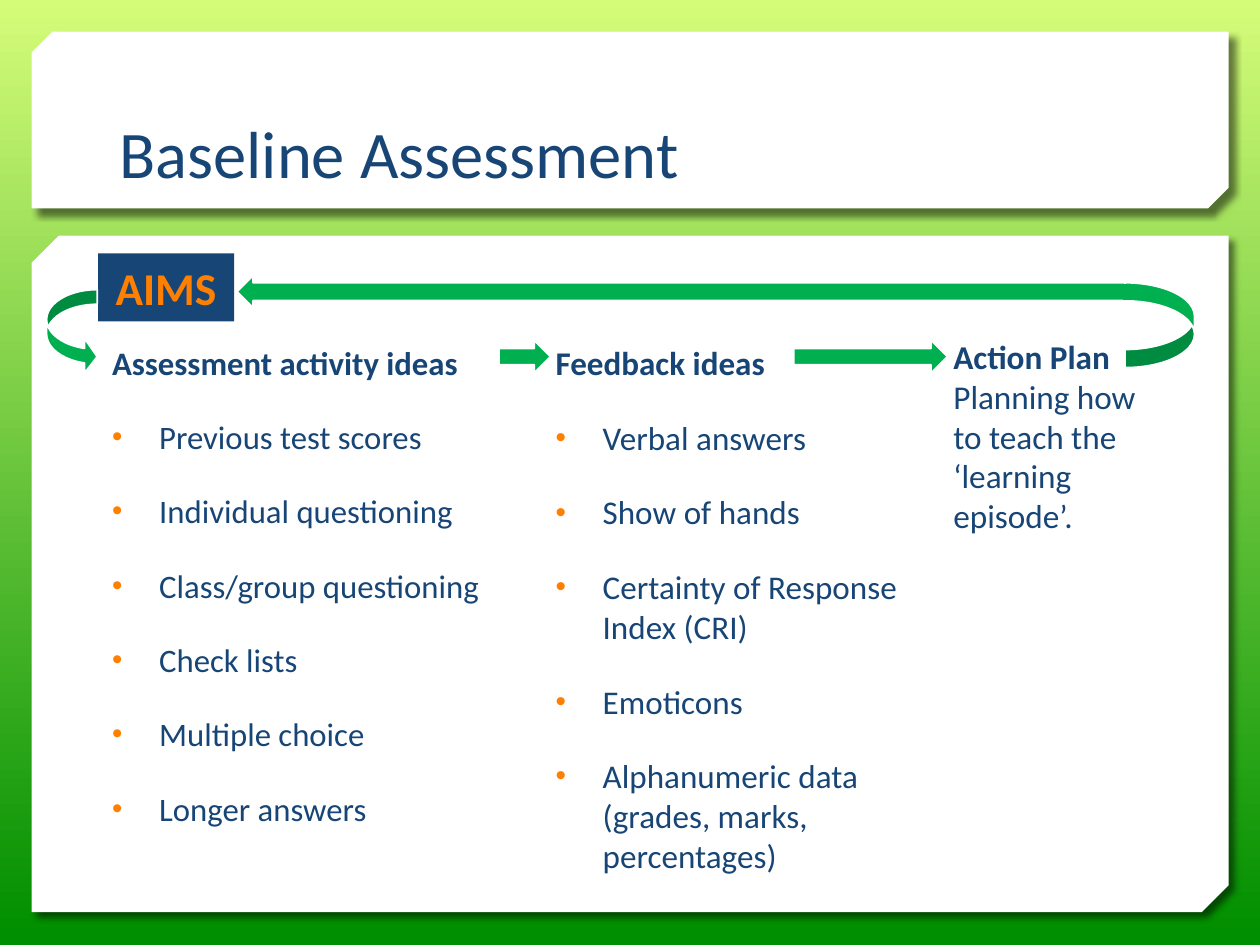
from dataclasses import dataclass

import pptx
import pptx.dml.color
import pptx.enum.shapes
import pptx.enum.text
import pptx.oxml
import pptx.oxml.ns
import pptx.util
from pptx.util import Cm, Pt

SHAPES = pptx.enum.shapes.MSO_SHAPE
ANCHOR = pptx.enum.text.MSO_ANCHOR
ALIGN = pptx.enum.text.PP_ALIGN
DRAWING = pptx.oxml.ns.nsdecls("a")


@dataclass(frozen=True)
class Theme:
    font: str = "Calibri"
    ink: str = "174576"
    accent: str = "FF7F01"
    arrow: str = "00B050"
    paper: str = "FFFFFF"
    sky: str = "D5FC79"
    grass: str = "008F00"
    title_size: float = 38
    aims_size: float = 26
    assessment_size: float = 18.7
    feedback_size: float = 18.9
    plan_size: float = 19
    bullet_gap: float = 20


THEME = Theme()


def colour(code):
    return pptx.dml.color.RGBColor.from_string(code)


def place(box, left, top, width, height):
    """Turn a rectangle relative to box into slide lengths."""
    return Cm(box[0] + left), Cm(box[1] + top), Cm(width), Cm(height)


def style(span, size, code=THEME.ink, bold=False):
    span.font.name = THEME.font
    span.font.size = Pt(size)
    span.font.bold = bold
    span.font.color.rgb = colour(code)


def add_solid(shapes, kind, bounds, fill, line=None, adjustments=()):
    shape = shapes.add_shape(kind, *bounds)
    shape.shadow.inherit = False
    shape.fill.solid()
    shape.fill.fore_color.rgb = colour(fill)
    if line:
        shape.line.color.rgb = colour(line)
        shape.line.width = Pt(1)
    else:
        shape.line.fill.background()
    for index, value in enumerate(adjustments):
        shape.adjustments[index] = value
    return shape


def add_text_box(page, bounds):
    frame = page.shapes.add_textbox(*bounds).text_frame
    frame.word_wrap = True
    return frame


def add_panel(page, box, snip):
    panel = add_solid(page.shapes, SHAPES.SNIP_2_DIAG_RECTANGLE, place(box, 0, 0, *box[2:]),
                      THEME.paper, adjustments=(snip, 0))
    effects = panel._element.spPr.find(pptx.oxml.ns.qn("a:effectLst"))
    effects.append(pptx.oxml.parse_xml(
        f'<a:outerShdw {DRAWING} blurRad="{Pt(4)}" dist="{Pt(5)}" dir="2700000" '
        'algn="tl" rotWithShape="0"><a:srgbClr val="000000">'
        '<a:alpha val="50000"/></a:srgbClr></a:outerShdw>'))


def add_bullet(para):
    properties = para._p.get_or_add_pPr()
    properties.set("marL", str(Cm(0.95)))
    properties.set("indent", str(-Cm(0.95)))
    for xml in (f'<a:buClr {DRAWING}><a:srgbClr val="{THEME.accent}"/></a:buClr>',
                f'<a:buSzPct {DRAWING} val="90000"/>',
                f'<a:buFont {DRAWING} typeface="Arial"/>',
                f'<a:buChar {DRAWING} char="•"/>'):
        properties.append(pptx.oxml.parse_xml(xml))


def add_idea_list(page, bounds, size, heading, ideas):
    frame = add_text_box(page, bounds)
    frame.text = "\n".join([heading, *ideas])
    for index, para in enumerate(frame.paragraphs):
        if index:
            add_bullet(para)
            para.space_before = Pt(THEME.bullet_gap)
        style(para.runs[0], size, bold=index == 0)


def add_action_plan(page, bounds):
    para = add_text_box(page, bounds).paragraphs[0]
    for text, bold in (("Action Plan ", True),
                       ("Planning how to teach the ‘learning episode’.", False)):
        span = para.add_run()
        span.text = text
        style(span, THEME.plan_size, bold=bold)


def add_aims(page, bounds):
    label = add_solid(page.shapes, SHAPES.RECTANGLE, bounds, THEME.ink)
    frame = label.text_frame
    frame.text = "AIMS"
    frame.vertical_anchor = ANCHOR.TOP
    para = frame.paragraphs[0]
    para.alignment = ALIGN.CENTER
    style(para.runs[0], THEME.aims_size, THEME.accent, bold=True)


def add_cycle(page, box):
    """Draw the arrows that lead from the aims through the columns and back."""
    shapes = page.shapes.add_group_shape().shapes
    arrows = (
        (SHAPES.CURVED_RIGHT_ARROW, (0.3, 1.09, 1.02, 1.7), (0.29, 0.684, 0.25), 0),
        (SHAPES.RIGHT_ARROW, (9.42, 2.11, 1.04, 0.66), (), 0),
        (SHAPES.RIGHT_ARROW, (15.36, 2.11, 3.1, 0.66), (), 0),
        (SHAPES.LEFT_ARROW, (4.14, 0.81, 18.03, 0.64), (0.561, 0.5), 0),
        (SHAPES.CURVED_RIGHT_ARROW, (22.04, 0.63, 1.4, 2.03), (0.261, 0.717, 0), 180),
    )
    for kind, bounds, adjustments, rotation in arrows:
        arrow = add_solid(shapes, kind, place(box, *bounds), THEME.arrow,
                          THEME.paper, adjustments)
        arrow.rotation = rotation
    left, top, _, height = place(box, 22.04, 0.97, 0, 0.33)
    seam = shapes.add_connector(pptx.enum.shapes.MSO_CONNECTOR.STRAIGHT,
                                left, top, left, top + height)
    seam.line.color.rgb = colour(THEME.arrow)
    seam.line.width = Pt(2)
    seam._element.spPr.append(pptx.oxml.parse_xml(f"<a:effectLst {DRAWING}/>"))


def add_background(page):
    fill = page.background.fill
    fill.gradient()
    fill.gradient_angle = 270
    for stop, code, position in zip(fill.gradient_stops, (THEME.sky, THEME.grass), (0, 0.99)):
        stop.color.rgb = colour(code)
        stop.position = position


def add_title(page, box):
    add_panel(page, box, 0.117)
    frame = add_text_box(page, place(box, 1.52, 0.17, 21.06, 3.18))
    frame.vertical_anchor = ANCHOR.BOTTOM
    frame.text = "Baseline Assessment"
    style(frame.paragraphs[0].runs[0], THEME.title_size)


def add_content(page, box):
    add_panel(page, box, 0.04)
    add_idea_list(page, place(box, 1.37, 2.03, 8.99, 9.55), THEME.assessment_size,
                  "Assessment activity ideas",
                  ["Previous test scores", "Individual questioning",
                   "Class/group questioning", "Check lists",
                   "Multiple choice", "Longer answers"])
    add_action_plan(page, place(box, 18.33, 1.9, 4.7, 5.08))
    add_aims(page, place(box, 1.34, 0.36, 2.74, 1.37))
    add_idea_list(page, place(box, 10.31, 2.03, 7.54, 9.83), THEME.feedback_size,
                  "Feedback ideas",
                  ["Verbal answers", "Show of hands",
                   "Certainty of Response Index (CRI)", "Emoticons",
                   "Alphanumeric data (grades, marks, percentages)"])
    add_cycle(page, box)


def main():
    deck = pptx.Presentation()
    deck.slide_width, deck.slide_height = Cm(25.4), Cm(19.05)
    page = deck.slides.add_slide(deck.slide_layouts[6])
    add_background(page)
    add_title(page, (0.64, 0.64, 24.13, 3.56))
    add_content(page, (0.64, 4.75, 24.13, 13.64))
    deck.save("out.pptx")


if __name__ == "__main__":
    main()
